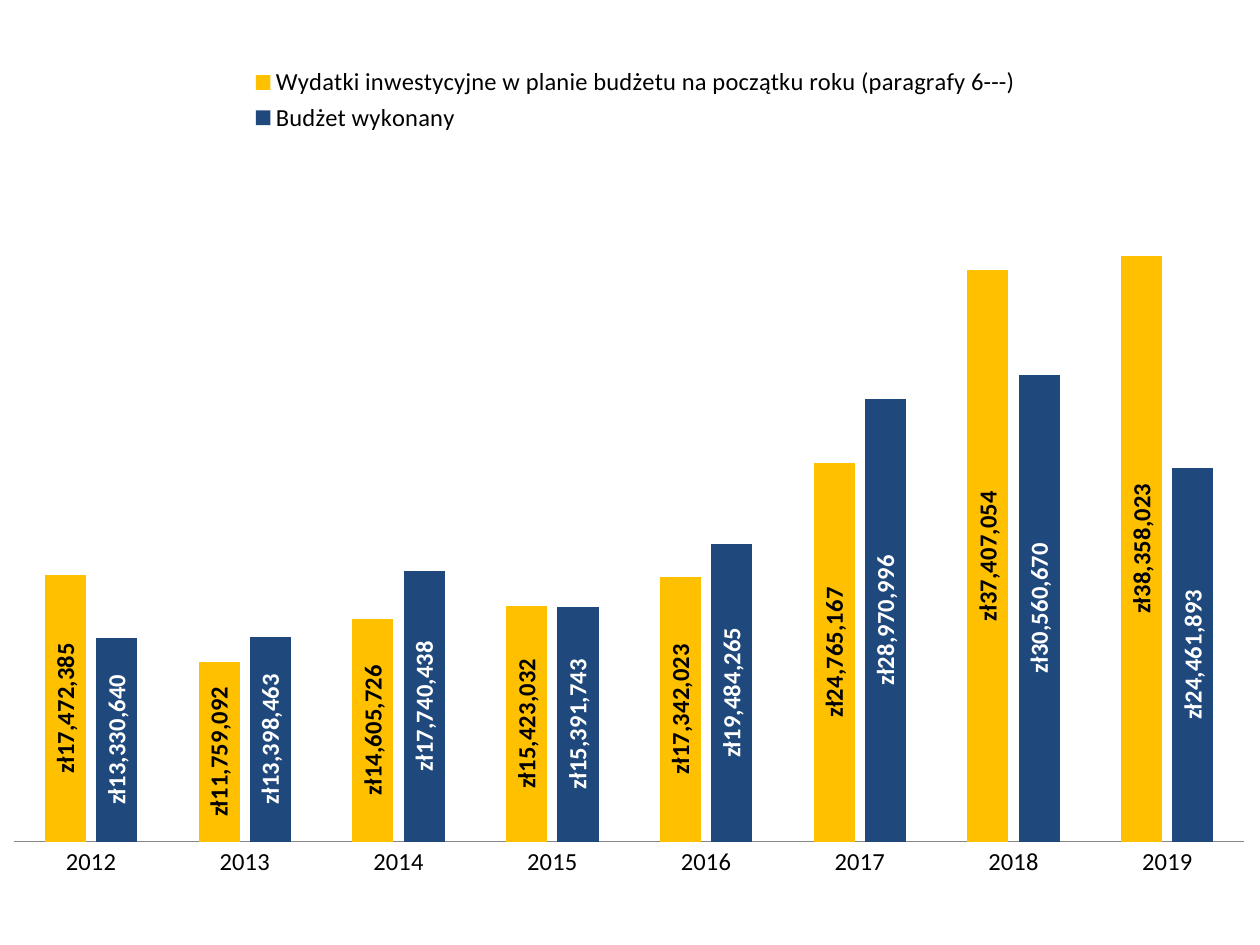
"""Build a slide comparing planned and executed investment spending by year."""
from dataclasses import dataclass

from lxml import etree
from pptx import Presentation
from pptx.chart.chart import Chart
from pptx.chart.data import CategoryChartData
from pptx.chart.series import BarSeries
from pptx.dml.color import RGBColor
from pptx.enum.chart import XL_CHART_TYPE, XL_LABEL_POSITION, XL_LEGEND_POSITION, XL_TICK_MARK
from pptx.oxml.ns import qn
from pptx.util import Cm, Pt

CLUSTERED = XL_CHART_TYPE.COLUMN_CLUSTERED
CENTER = XL_LABEL_POSITION.CENTER
LEGEND_TOP = XL_LEGEND_POSITION.TOP
NO_TICKS = XL_TICK_MARK.NONE
BLANK_LAYOUT = 6
CURRENCY = '"zł"#,##0'
VERTICAL_TEXT = "-5400000"


@dataclass(frozen=True)
class Theme:
    font: str = "Calibri"
    size: Pt = Pt(14)
    dark: RGBColor = RGBColor(0x00, 0x00, 0x00)
    light: RGBColor = RGBColor(0xFF, 0xFF, 0xFF)
    plan: RGBColor = RGBColor(0xFF, 0xC0, 0x00)
    executed: RGBColor = RGBColor(0x1F, 0x49, 0x7D)
    axis: RGBColor = RGBColor(0x87, 0x87, 0x87)


@dataclass(frozen=True)
class Budget:
    name: str
    amounts: tuple[int, ...]
    fill: RGBColor
    label_color: RGBColor


@dataclass(frozen=True)
class Area:
    x: float
    y: float
    w: float
    h: float


THEME = Theme()
YEARS = [str(year) for year in range(2012, 2020)]
BUDGETS = (
    Budget(
        "Wydatki inwestycyjne w planie budżetu na początku roku (paragrafy 6---)",
        (17472385, 11759092, 14605726, 15423032, 17342023, 24765167, 37407054, 38358023),
        THEME.plan,
        THEME.dark,
    ),
    Budget(
        "Budżet wykonany",
        (13330640, 13398463, 17740438, 15391743, 19484265, 28970996, 30560670, 24461893),
        THEME.executed,
        THEME.light,
    ),
)
PLOT_AREA = Area(0.02, 0.12, 0.96, 0.82)
LEGEND_AREA = Area(0.2, 0.01, 0.61, 0.09)


def place(part: etree._Element, area: Area, index: int, inner: bool = False) -> None:
    """Give a chart part a manual layout in fractions of the chart."""
    for previous in part.findall(qn("c:layout")):
        part.remove(previous)
    layout = etree.Element(qn("c:layout"))
    manual = etree.SubElement(layout, qn("c:manualLayout"))
    settings = [("layoutTarget", "inner")] if inner else []
    settings += [("xMode", "edge"), ("yMode", "edge")]
    settings += [(side, str(getattr(area, side))) for side in ("x", "y", "w", "h")]
    for tag, value in settings:
        etree.SubElement(manual, qn(f"c:{tag}"), val=value)
    part.insert(index, layout)


def style_series(series: BarSeries, budget: Budget) -> None:
    """Colour the columns and write their amounts vertically."""
    series.format.fill.solid()
    series.format.fill.fore_color.rgb = budget.fill
    series.invert_if_negative = False
    labels = series.data_labels
    labels.show_value = True
    labels.number_format = CURRENCY
    labels.number_format_is_linked = False
    labels.position = CENTER
    labels.font.name = THEME.font
    labels.font.size = THEME.size
    labels.font.bold = True
    labels.font.color.rgb = budget.label_color
    text_body = labels._element.find(f"{qn('c:txPr')}/{qn('a:bodyPr')}")
    text_body.set("rot", VERTICAL_TEXT)
    text_body.set("vert", "horz")


def style_axes(chart: Chart) -> None:
    """Show the years and hide the amount scale."""
    years = chart.category_axis
    years.major_tick_mark = NO_TICKS
    years.minor_tick_mark = NO_TICKS
    years.tick_labels.font.size = THEME.size
    years.format.line.color.rgb = THEME.axis
    amounts = chart.value_axis
    amounts.minimum_scale = 0
    amounts.maximum_scale = 45_000_000
    amounts.has_major_gridlines = False
    amounts.visible = False


def style_legend(chart: Chart) -> None:
    """Stack the budget names above the columns."""
    chart.has_legend = True
    legend = chart.legend
    legend.position = LEGEND_TOP
    legend.include_in_layout = False
    legend.font.size = THEME.size
    place(legend._element, LEGEND_AREA, 1)


def main() -> None:
    """Create and save the presentation."""
    deck = Presentation()
    deck.slide_width, deck.slide_height = Cm(25.4), Cm(19.05)
    slide = deck.slides.add_slide(deck.slide_layouts[BLANK_LAYOUT])
    spending = CategoryChartData(number_format=CURRENCY)
    spending.categories = YEARS
    for budget in BUDGETS:
        spending.add_series(budget.name, budget.amounts)
    chart = slide.shapes.add_chart(
        CLUSTERED, Cm(-0.23), Cm(1.09), Cm(25.83), Cm(16.89), spending
    ).chart
    chart.has_title = False
    chart.font.name = THEME.font
    chart.font.size = Pt(10)
    chart.font.color.rgb = THEME.dark
    columns = chart.plots[0]
    columns.gap_width = 150
    columns.overlap = -25
    columns.vary_by_categories = False
    for series, budget in zip(columns.series, BUDGETS):
        style_series(series, budget)
    style_axes(chart)
    style_legend(chart)
    place(chart._chartSpace.chart.plotArea, PLOT_AREA, 0, inner=True)
    deck.save("out.pptx")


if __name__ == "__main__":
    main()
